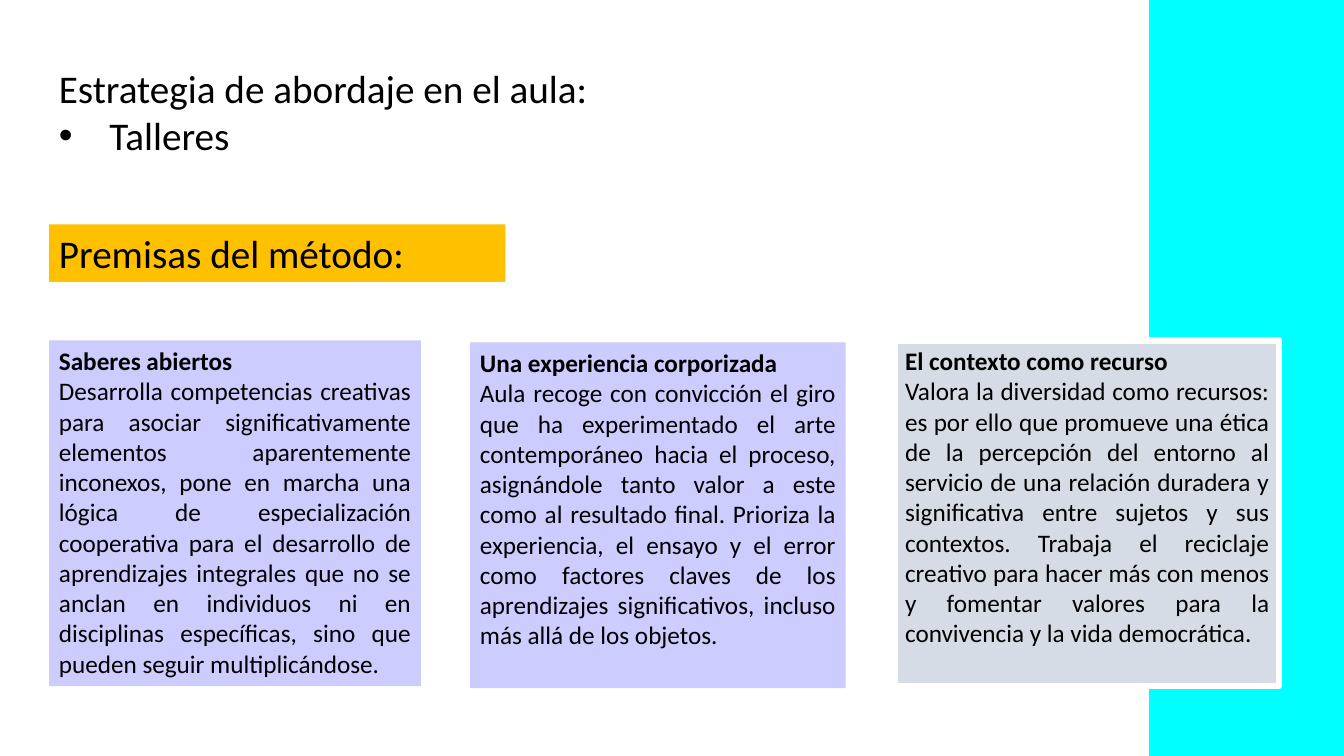
"""Build the slide on classroom workshops and the premises of the method."""
from lxml import etree
from pptx import Presentation
from pptx.dml.color import RGBColor
from pptx.enum.shapes import MSO_SHAPE
from pptx.enum.text import MSO_ANCHOR, PP_ALIGN
from pptx.oxml.ns import qn
from pptx.util import Pt

RECTANGLE = MSO_SHAPE.RECTANGLE
TOP = MSO_ANCHOR.TOP
LEFT, JUSTIFY = PP_ALIGN.LEFT, PP_ALIGN.JUSTIFY


def color(hex_code):
    return RGBColor.from_string(hex_code)


def add_block(left, top, width, height, fill=None, lines=(), size=18, align=LEFT):
    block = slide.shapes.add_shape(RECTANGLE, Pt(left), Pt(top), Pt(width), Pt(height))
    block.shadow.inherit = False
    block.line.fill.background()
    if fill:
        block.fill.solid()
        block.fill.fore_color.rgb = color(fill)
    else:
        block.fill.background()
    frame = block.text_frame
    frame.word_wrap = True
    frame.vertical_anchor = TOP
    frame.text = "\n".join(lines)
    for paragraph in frame.paragraphs:
        paragraph.alignment = align
        for run in paragraph.runs:
            run.font.name = "Calibri"
            run.font.size = Pt(size)
            run.font.color.rgb = color("000000")
    return block


presentation = Presentation()
presentation.slide_width = Pt(960)
presentation.slide_height = Pt(540)
slide = presentation.slides.add_slide(presentation.slide_layouts[6])

add_block(820.8, 0, 139.2, 540, "00FFFF")

strategy = add_block(35, 42.5, 463.7, 74.9, None,
                     ["Estrategia de abordaje en el aula:", "Talleres"], 28)
workshops = strategy.text_frame.paragraphs[1]
bullet_format = workshops._p.get_or_add_pPr()
bullet_format.set("marL", str(Pt(36)))
bullet_format.set("indent", str(-Pt(36)))
etree.SubElement(bullet_format, qn("a:buFont")).set("typeface", "Arial")
etree.SubElement(bullet_format, qn("a:buChar")).set("char", "•")

add_block(35, 160.2, 326, 41.2, "FFC000", ["Premisas del método:"], 28)

premises = [
    (35, 243.2, 265.7, "CCCCFF", None, "Saberes abiertos",
     "Desarrolla competencias creativas para asociar significativamente elementos "
     "aparentemente inconexos, pone en marcha una lógica de especialización cooperativa "
     "para el desarrollo de aprendizajes integrales que no se anclan en individuos ni en "
     "disciplinas específicas, sino que pueden seguir multiplicándose."),
    (335.7, 244.6, 268.4, "CCCCFF", None, "Una experiencia corporizada",
     "Aula recoge con convicción el giro que ha experimentado el arte contemporáneo hacia "
     "el proceso, asignándole tanto valor a este como al resultado final. Prioriza la "
     "experiencia, el ensayo y el error como factores claves de los aprendizajes "
     "significativos, incluso más allá de los objetos."),
    (639.4, 243.2, 274.3, "D6DCE5", "FFFFFF", "El contexto como recurso",
     "Valora la diversidad como recursos: es por ello que promueve una ética de la "
     "percepción del entorno al servicio de una relación duradera y significativa entre "
     "sujetos y sus contextos. Trabaja el reciclaje creativo para hacer más con menos y "
     "fomentar valores para la convivencia y la vida democrática."),
]
for left, top, width, fill, border, heading, explanation in premises:
    premise = add_block(left, top, width, 247, fill, [heading, explanation], 18, JUSTIFY)
    premise.text_frame.paragraphs[0].runs[0].font.bold = True
    if border:
        premise.line.color.rgb = color(border)
        premise.line.width = Pt(4.5)

presentation.save("out.pptx")
